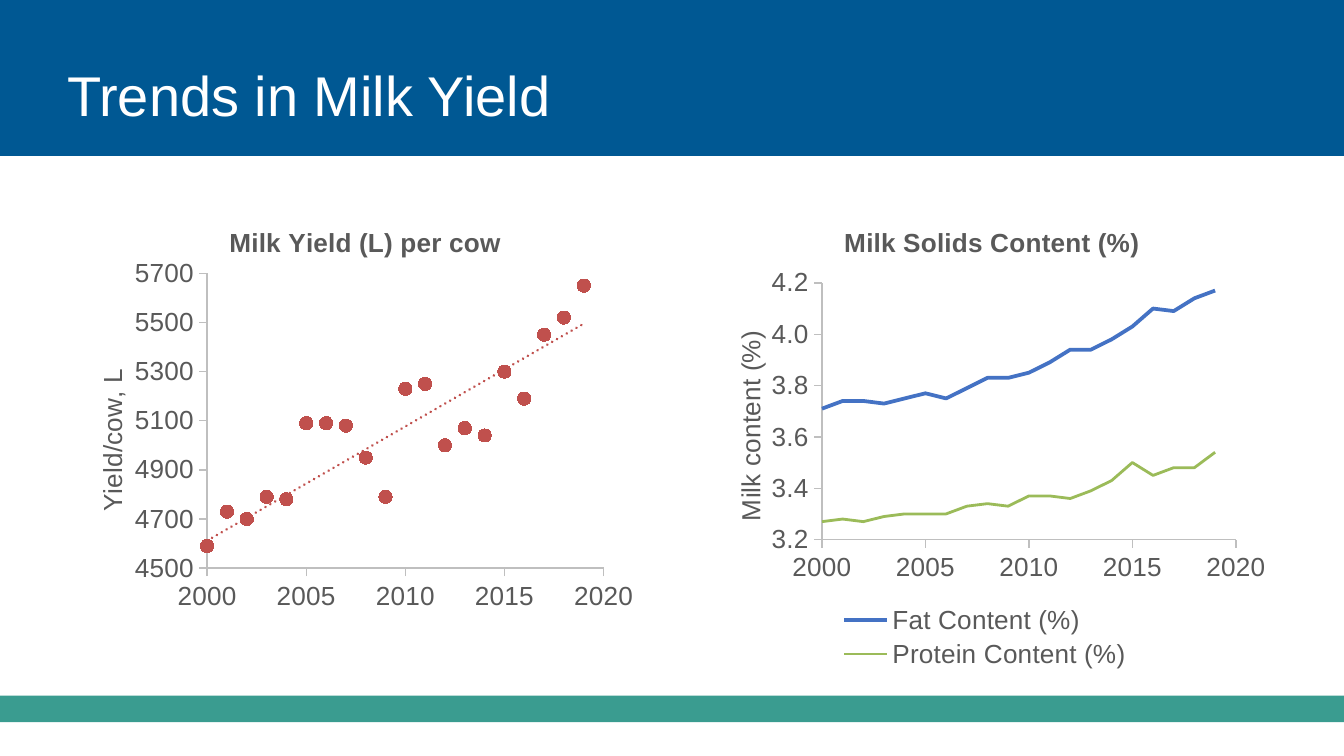
from lxml import etree
from pptx import Presentation
from pptx.chart.data import XyChartData
from pptx.dml.color import RGBColor
from pptx.enum.chart import XL_CHART_TYPE as ChartType
from pptx.enum.chart import XL_LEGEND_POSITION as LegendPos
from pptx.enum.chart import XL_MARKER_STYLE as Marker
from pptx.enum.chart import XL_TICK_MARK as Tick
from pptx.enum.shapes import MSO_SHAPE as Shape
from pptx.enum.text import MSO_ANCHOR as Anchor
from pptx.enum.text import PP_ALIGN as Align
from pptx.oxml import parse_xml
from pptx.oxml.ns import nsdecls, qn
from pptx.util import Cm, Pt

BLUE = RGBColor(0x00, 0x58, 0x93)
TEAL = RGBColor(0x3A, 0x9C, 0x90)
WHITE = RGBColor(0xFF, 0xFF, 0xFF)
GREY = RGBColor(0x59, 0x59, 0x59)
AXIS_GREY = RGBColor(0xBF, 0xBF, 0xBF)
RED = RGBColor(0xC0, 0x50, 0x4D)
FAT_BLUE = RGBColor(0x44, 0x72, 0xC4)
PROTEIN_GREEN = RGBColor(0x9B, 0xBB, 0x59)

FIRST_YEAR = 1990
MILK_YIELD = [4070, 4120, 4310, 4280, 4370, 4420, 4450, 4470, 4380, 4470,
              4590, 4730, 4700, 4790, 4780, 5090, 5090, 5080, 4950, 4790,
              5230, 5250, 5000, 5070, 5040, 5300, 5190, 5450, 5520, 5650]
FAT = [3.54, 3.55, 3.56, 3.56, 3.57, 3.58, 3.59, 3.61, 3.67, 3.7,
       3.71, 3.74, 3.74, 3.73, 3.75, 3.77, 3.75, 3.79, 3.83, 3.83,
       3.85, 3.89, 3.94, 3.94, 3.98, 4.03, 4.1, 4.09, 4.14, 4.17]
PROTEIN = [3.21, 3.18, 3.21, 3.2, 3.2, 3.18, 3.18, 3.21, 3.23, 3.25,
           3.27, 3.28, 3.27, 3.29, 3.3, 3.3, 3.3, 3.33, 3.34, 3.33,
           3.37, 3.37, 3.36, 3.39, 3.43, 3.5, 3.45, 3.48, 3.48, 3.54]


class SlideBuilder:
    font = "Arial"
    label_size = Pt(14)

    def __init__(self, slide):
        self.slide = slide

    def style(self, font, size, color, bold=False):
        font.name, font.size, font.bold = self.font, size, bold
        font.color.rgb = color

    def band(self, top, height, color):
        sp = self.slide.shapes.add_shape(Shape.RECTANGLE, 0, Cm(top), Cm(25.4), Cm(height))
        sp.shadow.inherit = False
        sp.fill.solid()
        sp.fill.fore_color.rgb = color
        sp.line.fill.background()
        # Bands lie behind the placeholders
        self.slide.shapes._spTree.insert(2, sp._element)

    def title(self, text):
        sp = self.slide.shapes.title
        sp.left, sp.top, sp.width, sp.height = Cm(1.27), Cm(0.58), Cm(22.86), Cm(2.39)
        tf = sp.text_frame
        tf.text = text
        tf.vertical_anchor = Anchor.MIDDLE
        tf.margin_left = tf.margin_right = tf.margin_top = tf.margin_bottom = 0
        p = tf.paragraphs[0]
        p.alignment = Align.LEFT
        self.style(p.runs[0].font, Pt(30), WHITE)

    def place(self, part, index, x, y, w=None, h=None, inner=False):
        """Place a chart part by fractions of the chart's size."""
        layout = part.find(qn("c:layout"))
        if layout is None:
            layout = etree.Element(qn("c:layout"))
            part.insert(index, layout)
        manual = etree.SubElement(layout, qn("c:manualLayout"))
        values = {"layoutTarget": "inner" if inner else None,
                  "xMode": "edge", "yMode": "edge", "x": x, "y": y, "w": w, "h": h}
        for tag, value in values.items():
            if value is not None:
                etree.SubElement(manual, qn(f"c:{tag}")).set("val", str(value))

    def label(self, title, text, x, y, bold=False):
        tf = title.text_frame
        tf.text = text
        self.style(tf.paragraphs[0].runs[0].font, self.label_size, GREY, bold)
        self.place(title._element, 1, x, y)
        return tf

    def axis(self, axis, low, high, step, fmt):
        axis.minimum_scale, axis.maximum_scale, axis.major_unit = low, high, step
        axis.has_major_gridlines = False
        axis.major_tick_mark, axis.minor_tick_mark = Tick.OUTSIDE, Tick.NONE
        axis.format.line.color.rgb = AXIS_GREY
        axis.format.line.width = Pt(0.75)
        axis.tick_labels.number_format = fmt
        axis.tick_labels.number_format_is_linked = False
        self.style(axis.tick_labels.font, self.label_size, GREY)

    def chart(self, left, kind, series, title, title_at, y_title, y_title_at,
              scale, fmt, plot_at):
        data = XyChartData()
        for name, values in series:
            points = data.add_series(name)
            for year, value in enumerate(values, FIRST_YEAR):
                points.add_data_point(year, value)
        chart = self.slide.shapes.add_chart(
            kind, Cm(left), Cm(3.73), Cm(11.02), Cm(8.99), data).chart
        chart.font.name, chart.font.size = self.font, Pt(10)
        chart.has_legend = False
        chart.plots[0].vary_by_categories = False
        self.label(chart.chart_title, title, *title_at, bold=True)
        self.axis(chart.category_axis, 2000, 2020, 5, "0")
        self.axis(chart.value_axis, *scale, fmt)
        tf = self.label(chart.value_axis.axis_title, y_title, *y_title_at)
        body = tf._txBody.bodyPr
        body.set("rot", "-5400000")
        body.set("vert", "horz")
        plot_area = chart._chartSpace.find(f".//{qn('c:plotArea')}")
        self.place(plot_area, 0, *plot_at, inner=True)
        return chart

    def dots(self, series, color):
        series.format.line.fill.background()
        marker = series.marker
        marker.style, marker.size = Marker.CIRCLE, 7
        marker.format.fill.solid()
        marker.format.fill.fore_color.rgb = color
        marker.format.line.color.rgb = color

    def trend(self, series, color):
        line = parse_xml(
            f'<c:trendline {nsdecls("c", "a")}><c:spPr><a:ln w="{Pt(1.5)}" cap="rnd">'
            f'<a:solidFill><a:srgbClr val="{color}"/></a:solidFill>'
            '<a:prstDash val="sysDot"/></a:ln></c:spPr><c:trendlineType val="linear"/>'
            '<c:dispRSqr val="0"/><c:dispEq val="0"/></c:trendline>')
        series._element.find(qn("c:xVal")).addprevious(line)

    def line(self, series, color, width):
        series.smooth = False
        series.marker.style = Marker.NONE
        series.format.line.color.rgb = color
        series.format.line.width = Pt(width)

    def legend(self, chart, *box):
        chart.has_legend = True
        legend = chart.legend
        legend.position = LegendPos.BOTTOM
        legend.include_in_layout = False
        self.style(legend.font, self.label_size, GREY)
        self.place(legend._element, 1, *box)


def main():
    prs = Presentation()
    prs.slide_width, prs.slide_height = Cm(25.4), Cm(14.29)
    s = SlideBuilder(prs.slides.add_slide(prs.slide_layouts[5]))

    # Header and footer bands, title
    s.band(-0.05, 3, BLUE)
    s.band(13.15, 0.5, TEAL)
    s.title("Trends in Milk Yield")

    # Yield per cow with its linear trend
    chart = s.chart(1.27, ChartType.XY_SCATTER, [("Series 1", MILK_YIELD)],
                    "Milk Yield (L) per cow", (0.27, 0.05),
                    "Yield/cow, L", (0.04, 0.35),
                    (4500, 5700, 200), "0", (0.24, 0.16, 0.68, 0.62))
    dots = chart.plots[0].series[0]
    s.dots(dots, RED)
    s.trend(dots, RED)

    # Fat and protein content
    chart = s.chart(13.11, ChartType.XY_SCATTER_LINES_NO_MARKERS,
                    [("Fat Content (%)", FAT), ("Protein Content (%)", PROTEIN)],
                    "Milk Solids Content (%)", (0.25, 0.05),
                    "Milk content (%)", (0.06, 0.27),
                    (3.2, 4.2, 0.2), "0.0", (0.22, 0.18, 0.71, 0.54))
    fat, protein = chart.plots[0].series
    s.line(fat, FAT_BLUE, 2)
    s.line(protein, PROTEIN_GREEN, 1.5)
    s.legend(chart, 0.24, 0.85, 0.52, 0.15)

    prs.save("out.pptx")


if __name__ == "__main__":
    main()
